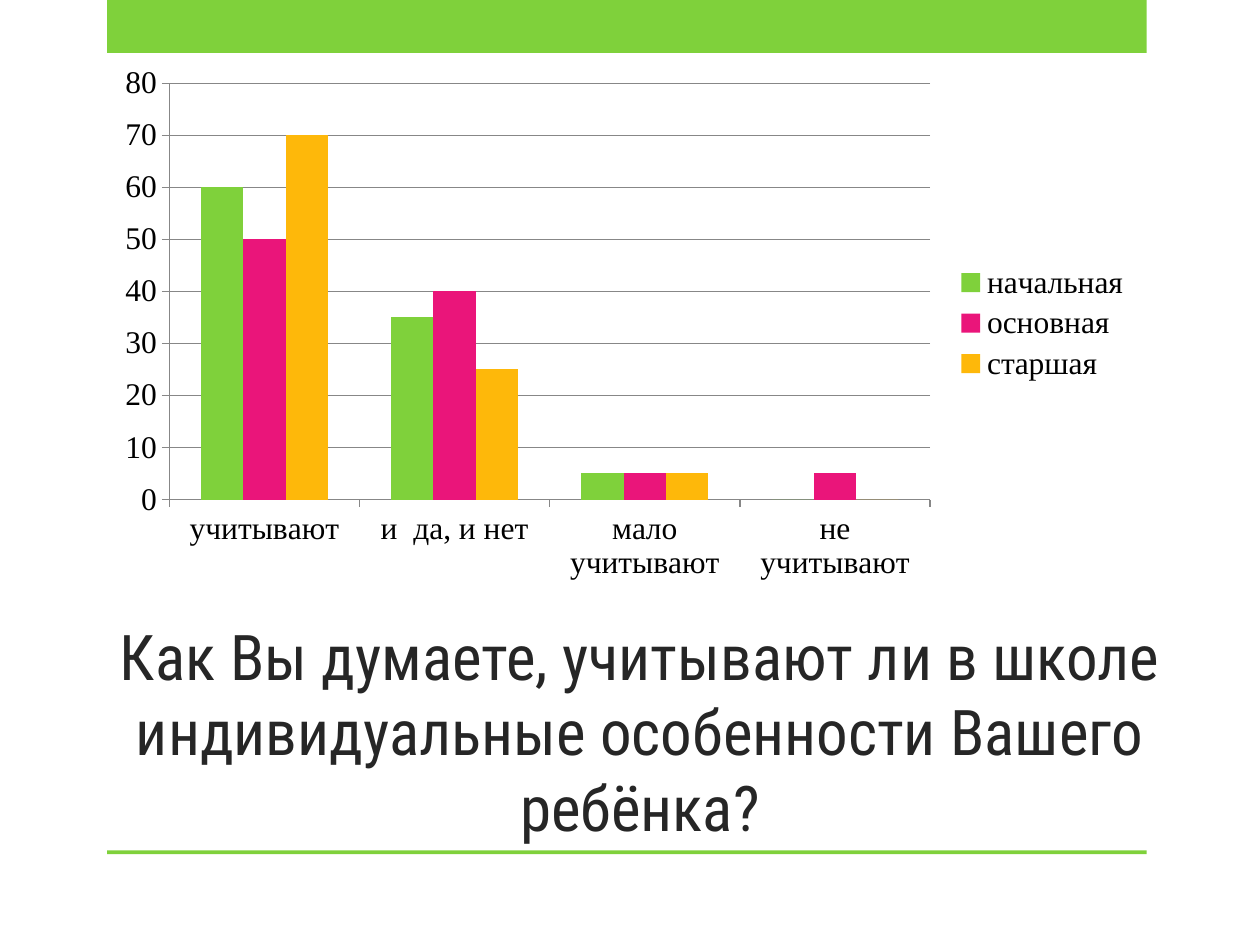
from pptx import Presentation
from pptx.chart.data import CategoryChartData
from pptx.dml.color import RGBColor
from pptx.enum.chart import XL_CHART_TYPE, XL_LEGEND_POSITION, XL_TICK_MARK
from pptx.enum.shapes import MSO_SHAPE
from pptx.enum.text import MSO_ANCHOR, MSO_AUTO_SIZE, PP_ALIGN
from pptx.util import Inches, Pt

COLUMNS = XL_CHART_TYPE.COLUMN_CLUSTERED
LEGEND_RIGHT = XL_LEGEND_POSITION.RIGHT
TICK_OUT = XL_TICK_MARK.OUTSIDE
RECT = MSO_SHAPE.RECTANGLE
BOTTOM = MSO_ANCHOR.BOTTOM
NO_FIT = MSO_AUTO_SIZE.NONE
CENTER = PP_ALIGN.CENTER

TITLE = "Как Вы думаете, учитывают ли в школе индивидуальные особенности Вашего ребёнка?"
CATEGORIES = ["учитывают", "и  да, и нет", "мало учитывают", "не учитывают"]
SERIES = [
    ("начальная", (60, 35, 5, 0), "7FD13B"),
    ("основная", (50, 40, 5, 5), "EA157A"),
    ("старшая", (70, 25, 5, 0), "FEB80A"),
]

THEME = {
    "band": "7FD13B",
    "grid": "878787",
    "title": {"name": "Roboto Condensed", "size": 36, "color": "262626", "bold": False},
    "chart": {"name": "Times New Roman", "size": 18, "color": "000000", "bold": False},
}
BANDS = [(0.85, 0, 8.25, 0.42), (0.85, 6.75, 8.25, 0.03)]
TITLE_BOX = (0.83, 5, 8.5, 1.75)
CHART_BOX = (0.83, 0.44, 8.25, 4.25)


def rgb(value):
    return RGBColor.from_string(value)


def box(values):
    return [Inches(v) for v in values]


def set_attrs(obj, values):
    for name, value in values.items():
        setattr(obj, name, value)


def set_font(font, style):
    set_attrs(font, {"name": style["name"], "size": Pt(style["size"]), "bold": style["bold"]})
    font.color.rgb = rgb(style["color"])


def set_line(fmt):
    fmt.line.color.rgb = rgb(THEME["grid"])
    fmt.line.width = Pt(0.75)


def add_band(s, place):
    sp = s.shapes.add_shape(RECT, *box(place))
    sp.shadow.inherit = False
    sp.fill.solid()
    sp.fill.fore_color.rgb = rgb(THEME["band"])
    sp.line.fill.background()


def fill_title(sp):
    set_attrs(sp, dict(zip(("left", "top", "width", "height"), box(TITLE_BOX))))
    tf = sp.text_frame
    set_attrs(tf, {"word_wrap": True, "auto_size": NO_FIT, "vertical_anchor": BOTTOM})
    p = tf.paragraphs[0]
    p.alignment = CENTER
    r = p.add_run()
    r.text = TITLE
    set_font(r.font, THEME["title"])


def add_survey_chart(s):
    data = CategoryChartData()
    data.categories = CATEGORIES
    for name, values, _ in SERIES:
        data.add_series(name, values)
    chart = s.shapes.add_chart(COLUMNS, *box(CHART_BOX), data).chart
    set_attrs(chart, {"has_title": False, "has_legend": True})
    set_font(chart.font, THEME["chart"])
    set_attrs(chart.legend, {"position": LEGEND_RIGHT, "include_in_layout": False})

    plot = chart.plots[0]
    set_attrs(plot, {"gap_width": 150, "overlap": 0, "vary_by_categories": False})
    for series, (_, _, color) in zip(plot.series, SERIES):
        series.format.fill.solid()
        series.format.fill.fore_color.rgb = rgb(color)

    for axis in (chart.category_axis, chart.value_axis):
        axis.major_tick_mark = TICK_OUT
        set_line(axis.format)
    set_attrs(chart.value_axis, {
        "minimum_scale": 0, "maximum_scale": 80, "major_unit": 10,
        "has_major_gridlines": True,
    })
    set_line(chart.value_axis.major_gridlines.format)


def main():
    prs = Presentation()
    set_attrs(prs, {"slide_width": Inches(10), "slide_height": Inches(7.5)})
    s = prs.slides.add_slide(prs.slide_layouts[5])
    for place in BANDS:
        add_band(s, place)
    fill_title(s.shapes.title)
    add_survey_chart(s)
    prs.save("out.pptx")


if __name__ == "__main__":
    main()
